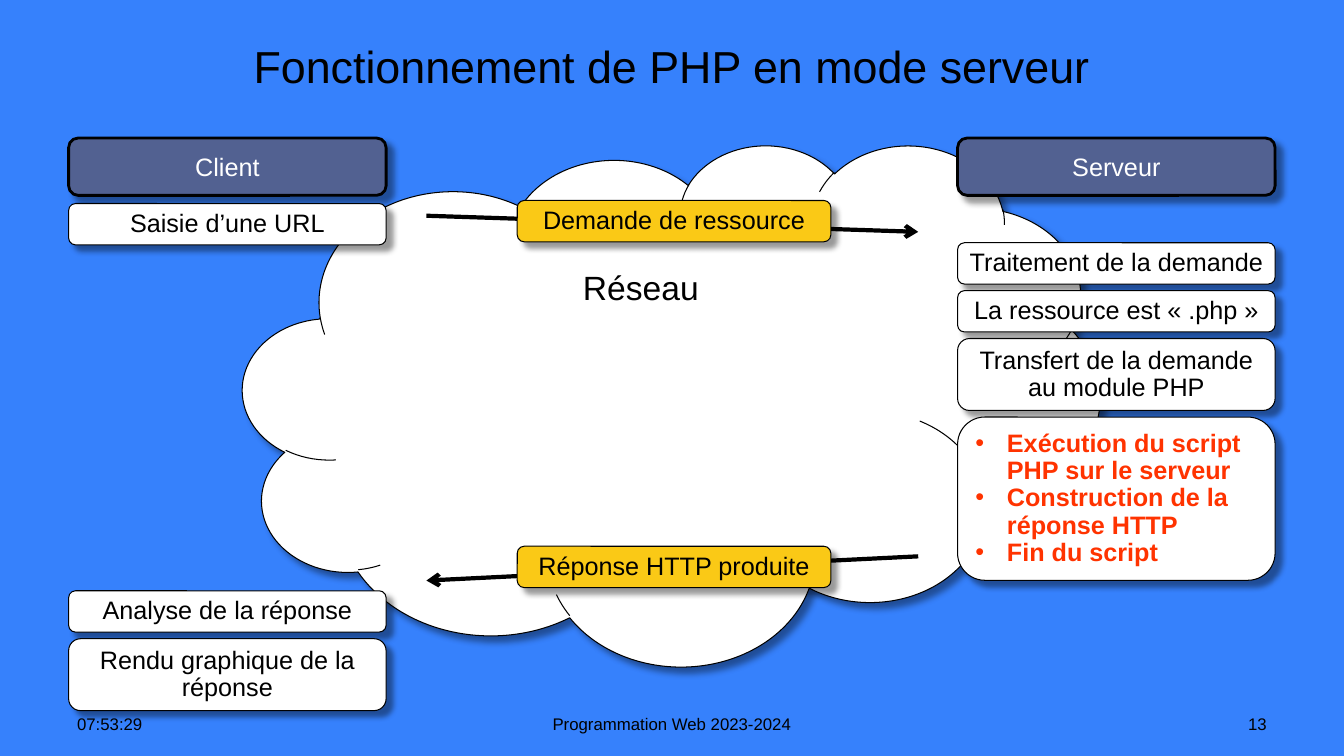
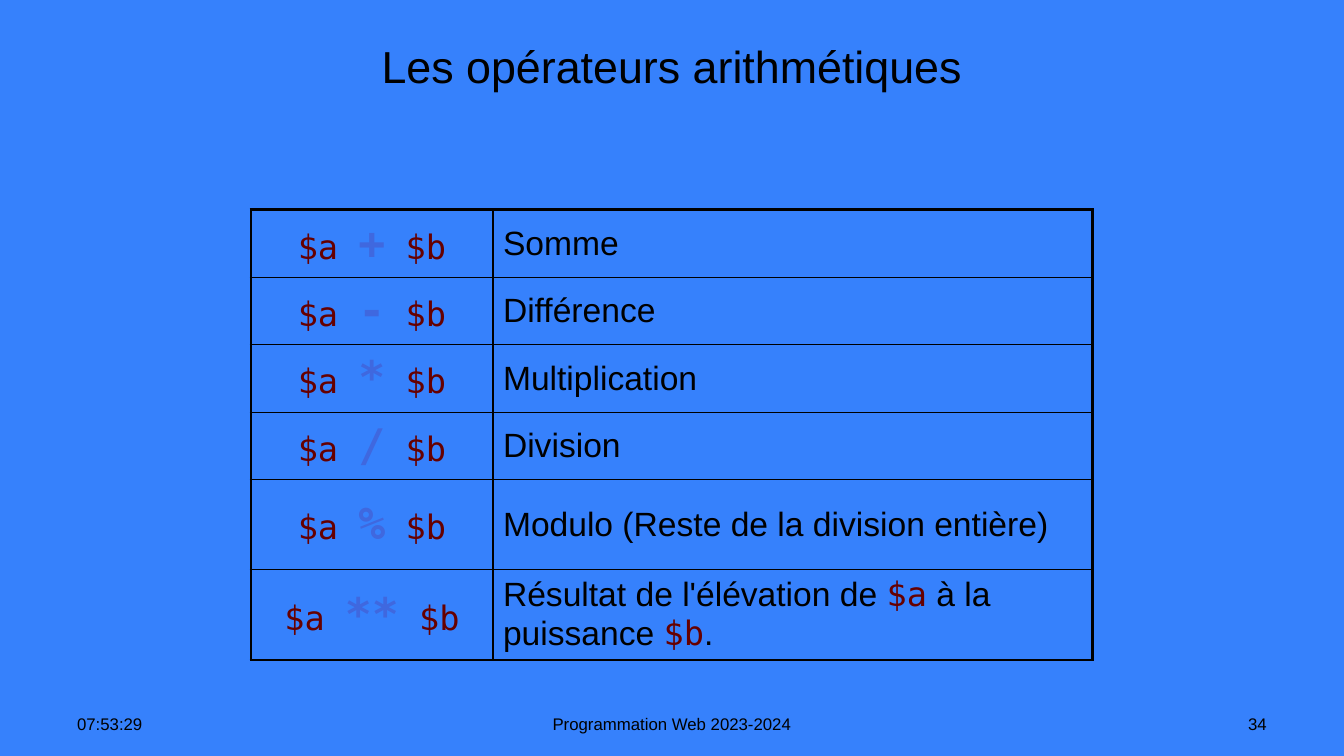
from dataclasses import dataclass
from typing import NamedTuple

from lxml.etree import SubElement
from pptx import Presentation
from pptx.dml.color import RGBColor
from pptx.enum.shapes import MSO_CONNECTOR, MSO_SHAPE
from pptx.enum.text import MSO_ANCHOR, PP_ALIGN
from pptx.oxml.ns import qn
from pptx.shapes.autoshape import Shape
from pptx.slide import Slide
from pptx.table import _Cell
from pptx.text.text import _Paragraph
from pptx.util import Pt

BLUE = RGBColor(0x36, 0x81, 0xFC)
BLACK = RGBColor(0x00, 0x00, 0x00)
WHITE = RGBColor(0xFF, 0xFF, 0xFF)
SLATE = RGBColor(0x52, 0x61, 0x91)
YELLOW = RGBColor(0xFA, 0xC9, 0x16)
RED = RGBColor(0xFF, 0x33, 0x00)
MAROON = RGBColor(0x66, 0x00, 0x00)
OPERATOR_BLUE = RGBColor(0x3F, 0x68, 0xDF)

SANS = "Arial"
MONO = "DejaVu Sans Mono"

SLIDE_WIDTH, SLIDE_HEIGHT = 960, 540
COLUMN_WIDTH = 226.8
CLIENT_LEFT, SERVER_LEFT = 49, 684
HEADER_TOP, HEADER_HEIGHT = 98.6, 41
ONE_LINE, TWO_LINES, FIVE_LINES = 29.5, 51.4, 116.6
STACK_GAP = 4.7
MESSAGE_LEFT, MESSAGE_WIDTH = 369.5, 224
ARROW_LEFT, ARROW_RIGHT = 304.6, 655.9


class Frame(NamedTuple):
    left: float
    top: float
    width: float
    height: float


class Span(NamedTuple):
    text: str
    font: str = SANS
    color: RGBColor = BLACK
    size: float = 24
    bold: bool = False


@dataclass(frozen=True)
class BoxStyle:
    fill: RGBColor
    color: RGBColor = BLACK
    line_width: float = 0.75
    line_spacing: float = 0.9
    bulleted: bool = False


@dataclass(frozen=True)
class Step:
    lines: tuple[str, ...]
    height: float = ONE_LINE
    style: BoxStyle = BoxStyle(WHITE)


@dataclass(frozen=True)
class Stack:
    left: float
    top: float
    steps: tuple[Step, ...]


@dataclass(frozen=True)
class Arrow:
    start: tuple[float, float]
    end: tuple[float, float]


@dataclass(frozen=True)
class Operation:
    operator: str
    meaning: tuple[Span, ...]
    height: float = 48.2


HEADER = BoxStyle(SLATE, WHITE, line_width=2, line_spacing=1)
MESSAGE = BoxStyle(YELLOW)
SCRIPT = BoxStyle(WHITE, RED, bulleted=True)

STACKS = (
    Stack(CLIENT_LEFT, 145.4, (Step(("Saisie d’une URL",)),)),
    Stack(SERVER_LEFT, 173.4, (
        Step(("Traitement de la demande",)),
        Step(("La ressource est «\u00a0.php\u00a0»",)),
        Step(("Transfert de la demande au module PHP",), TWO_LINES),
        Step(("Exécution du script PHP sur le serveur",
              "Construction de la réponse HTTP",
              "Fin du script"), FIVE_LINES, SCRIPT),
    )),
    Stack(CLIENT_LEFT, 422, (
        Step(("Analyse de la réponse",)),
        Step(("Rendu graphique de la réponse",), TWO_LINES),
    )),
)

ARROWS = (
    Arrow((ARROW_LEFT, 154.1), (ARROW_RIGHT, 165.6)),
    Arrow((ARROW_RIGHT, 397.4), (ARROW_LEFT, 414.7)),
)

OPERATIONS = (
    Operation("+", (Span("Somme"),)),
    Operation("-", (Span("Différence"),)),
    Operation("*", (Span("Multiplication"),)),
    Operation("/", (Span("Division"),)),
    Operation("%", (Span("Modulo (Reste de la division entière)"),), 64.1),
    Operation("**", (
        Span("Résultat de l'élévation de "),
        Span("$a", MONO, MAROON),
        Span(" à la puissance "),
        Span("$b", MONO, MAROON),
        Span("."),
    ), 64.1),
)


def set_font(font, name: str, size: float, color: RGBColor, bold: bool = False) -> None:
    font.name = name
    font.size = Pt(size)
    font.color.rgb = color
    font.bold = bold


def add_text(slide: Slide, frame: Frame, text: str, size: float,
             align: PP_ALIGN, anchor: MSO_ANCHOR) -> None:
    text_frame = slide.shapes.add_textbox(*map(Pt, frame)).text_frame
    text_frame.word_wrap = True
    text_frame.vertical_anchor = anchor
    para = text_frame.paragraphs[0]
    para.text = text
    para.alignment = align
    set_font(para.font, SANS, size, BLACK)


def add_page(deck, title: str, number: str) -> Slide:
    """Add a blank slide with the shared background, title and footer."""
    page = deck.slides.add_slide(deck.slide_layouts[6])
    page.background.fill.solid()
    page.background.fill.fore_color.rgb = BLUE
    add_text(page, Frame(49, 21.6, 862, 51), title, 32,
             PP_ALIGN.CENTER, MSO_ANCHOR.MIDDLE)
    for left, width, text, align in (
        (48, 224, "07:53:29", PP_ALIGN.LEFT),
        (328, 304, "Programmation Web 2023-2024", PP_ALIGN.CENTER),
        (688, 224, number, PP_ALIGN.RIGHT),
    ):
        add_text(page, Frame(left, 508.3, width, 19.5), text, 12,
                 align, MSO_ANCHOR.BOTTOM)
    return page


def add_outlined_shape(slide: Slide, kind: MSO_SHAPE, frame: Frame,
                       fill: RGBColor, line_width: float) -> Shape:
    """Add a black-outlined shape with a soft shadow to the lower right."""
    shape = slide.shapes.add_shape(kind, *map(Pt, frame))
    shape.fill.solid()
    shape.fill.fore_color.rgb = fill
    shape.line.color.rgb = BLACK
    shape.line.width = Pt(line_width)
    shape.shadow.inherit = False
    effects = shape._element.spPr.find(qn("a:effectLst"))
    shadow = SubElement(effects, qn("a:outerShdw"), blurRad=str(Pt(4)),
                        dist=str(Pt(6)), dir="2700000", algn="tl", rotWithShape="0")
    color = SubElement(shadow, qn("a:srgbClr"), val=str(BLACK))
    SubElement(color, qn("a:alpha"), val="40000")
    return shape


def add_bullet(para: _Paragraph) -> None:
    properties = para._p.get_or_add_pPr()
    properties.set("marL", str(Pt(22.5)))
    properties.set("indent", str(Pt(-22.5)))
    SubElement(properties, qn("a:buFont"), typeface=SANS)
    SubElement(properties, qn("a:buChar"), char="•")


def add_box(slide: Slide, frame: Frame, lines: tuple[str, ...], style: BoxStyle) -> None:
    box = add_outlined_shape(slide, MSO_SHAPE.ROUNDED_RECTANGLE, frame,
                             style.fill, style.line_width)
    text_frame = box.text_frame
    text_frame.word_wrap = frame.height >= TWO_LINES
    text_frame.vertical_anchor = MSO_ANCHOR.MIDDLE
    for index, line in enumerate(lines):
        para = text_frame.add_paragraph() if index else text_frame.paragraphs[0]
        para.text = line
        para.line_spacing = style.line_spacing
        para.alignment = PP_ALIGN.LEFT if style.bulleted else PP_ALIGN.CENTER
        if style.bulleted:
            add_bullet(para)
        set_font(para.font, SANS, 18, style.color, style.bulleted)


def add_stack(slide: Slide, stack: Stack) -> None:
    top = stack.top
    for step in stack.steps:
        add_box(slide, Frame(stack.left, top, COLUMN_WIDTH, step.height),
                step.lines, step.style)
        top += step.height + STACK_GAP


def add_arrow(slide: Slide, arrow: Arrow) -> None:
    connector = slide.shapes.add_connector(
        MSO_CONNECTOR.STRAIGHT, *map(Pt, arrow.start + arrow.end))
    connector.line.color.rgb = BLACK
    connector.line.width = Pt(3)
    SubElement(connector.line._get_or_add_ln(), qn("a:tailEnd"), type="arrow")
    SubElement(connector._element.spPr, qn("a:effectLst"))


def add_cloud(slide: Slide) -> None:
    cloud = add_outlined_shape(slide, MSO_SHAPE.CLOUD,
                               Frame(173.5, 103, 612, 372.2), WHITE, 0.75)
    text_frame = cloud.text_frame
    text_frame.vertical_anchor = MSO_ANCHOR.TOP
    text_frame.margin_top = Pt(31.2)
    para = text_frame.paragraphs[0]
    para.text = "Réseau"
    para.alignment = PP_ALIGN.CENTER
    set_font(para.font, SANS, 24, BLACK)


def set_borders(cell: _Cell, outer_sides: set[str]) -> None:
    """Draw thick borders on the outer sides and thin ones elsewhere."""
    properties = cell._tc.get_or_add_tcPr()
    for side in "LRTB":
        width = Pt(2.25 if side in outer_sides else 1)
        line = SubElement(properties, qn(f"a:ln{side}"), w=str(width))
        fill = SubElement(line, qn("a:solidFill"))
        SubElement(fill, qn("a:srgbClr"), val=str(BLACK))


def fill_cell(cell: _Cell, spans: tuple[Span, ...], align: PP_ALIGN,
              outer_sides: set[str]) -> None:
    set_borders(cell, outer_sides)
    cell.fill.background()
    cell.vertical_anchor = MSO_ANCHOR.MIDDLE
    para = cell.text_frame.paragraphs[0]
    para.alignment = align
    for span in spans:
        run = para.add_run()
        run.text = span.text
        set_font(run.font, span.font, span.size, span.color, span.bold)


def add_operations(slide: Slide) -> None:
    widths = (172.8, 428.4)
    height = sum(operation.height for operation in OPERATIONS)
    frame = Frame(179.3, 149.8, sum(widths), height)
    table = slide.shapes.add_table(len(OPERATIONS), len(widths), *map(Pt, frame)).table
    table.first_row = False
    table.horz_banding = False
    for column, width in zip(table.columns, widths):
        column.width = Pt(width)
    for index, operation in enumerate(OPERATIONS):
        table.rows[index].height = Pt(operation.height)
        edges = {"T"} if index == 0 else set()
        if index == len(OPERATIONS) - 1:
            edges = {"B"}
        expression = (
            Span("$a ", MONO, MAROON),
            Span(operation.operator, MONO, OPERATOR_BLUE, 32, True),
            Span(" $b", MONO, MAROON),
        )
        fill_cell(table.cell(index, 0), expression, PP_ALIGN.CENTER, edges | {"L"})
        fill_cell(table.cell(index, 1), operation.meaning, PP_ALIGN.LEFT, edges | {"R"})


def add_server_mode_page(deck) -> None:
    page = add_page(deck, "Fonctionnement de PHP en mode serveur", "13")
    add_cloud(page)
    for left, name in ((CLIENT_LEFT, "Client"), (SERVER_LEFT, "Serveur")):
        add_box(page, Frame(left, HEADER_TOP, COLUMN_WIDTH, HEADER_HEIGHT),
                (name,), HEADER)
    for arrow in ARROWS:
        add_arrow(page, arrow)
    for top, text in ((143.2, "Demande de ressource"), (390.2, "Réponse HTTP produite")):
        add_box(page, Frame(MESSAGE_LEFT, top, MESSAGE_WIDTH, ONE_LINE), (text,), MESSAGE)
    for stack in STACKS:
        add_stack(page, stack)


def main() -> None:
    deck = Presentation()
    deck.slide_width = Pt(SLIDE_WIDTH)
    deck.slide_height = Pt(SLIDE_HEIGHT)
    add_server_mode_page(deck)
    add_operations(add_page(deck, "Les opérateurs arithmétiques", "34"))
    deck.save("out.pptx")


if __name__ == "__main__":
    main()
